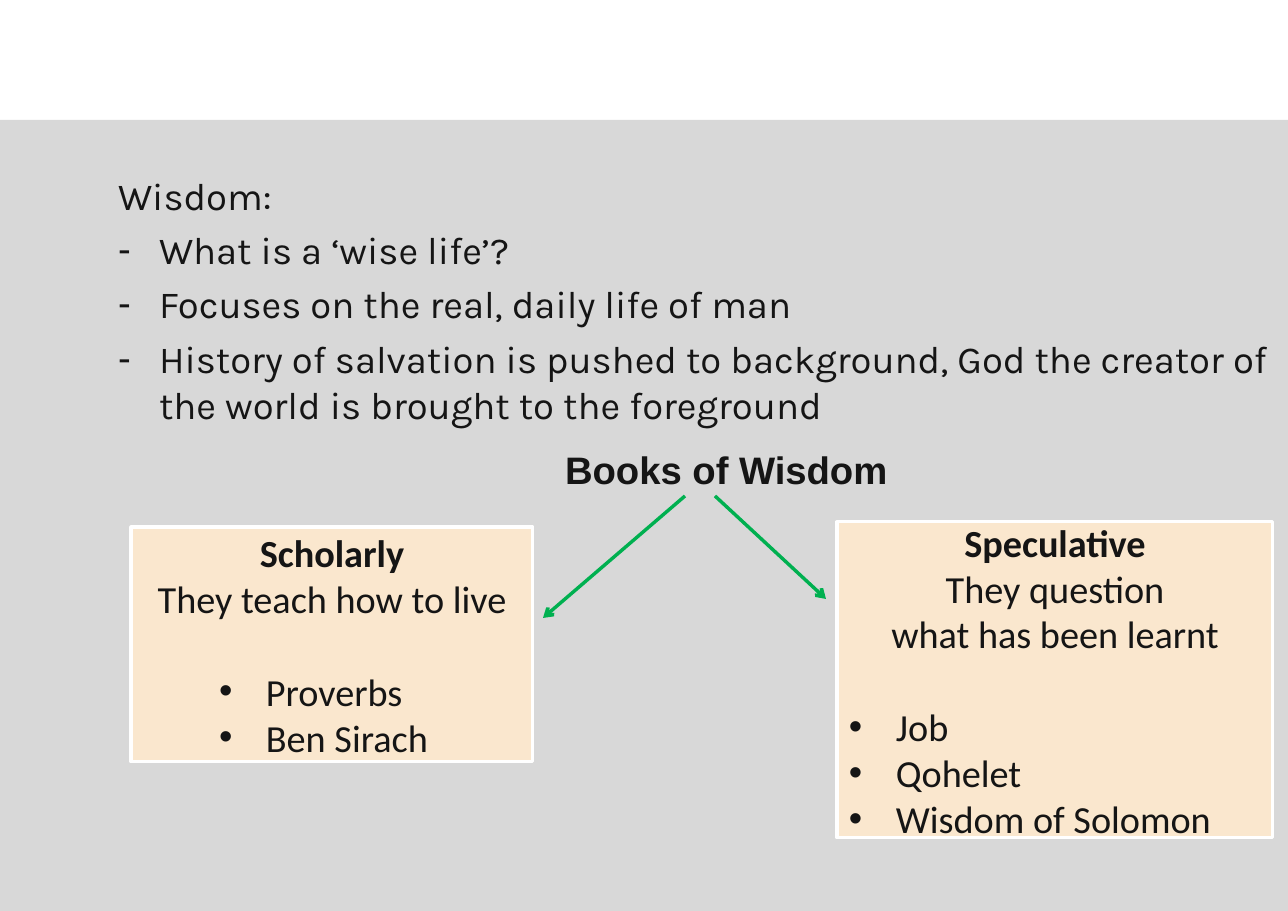
from dataclasses import dataclass
from pptx import Presentation
from pptx.dml.color import RGBColor as RGB
from pptx.enum.shapes import MSO_CONNECTOR as CONN, MSO_SHAPE as SHAPE
from pptx.enum.text import MSO_ANCHOR as ANCHOR, PP_ALIGN as ALIGN
from pptx.oxml.ns import qn
from pptx.util import Pt
from lxml.etree import SubElement

PX = 8298  # EMU in one px


@dataclass(frozen=True)
class Theme:
    panel: RGB = RGB(0xD8, 0xD8, 0xD8)
    card: RGB = RGB(0xFA, 0xE7, 0xCE)
    border: RGB = RGB(0xFF, 0xFF, 0xFF)
    ink: RGB = RGB(0x15, 0x15, 0x15)
    arrow: RGB = RGB(0x00, 0xB0, 0x50)
    size: float = 25
    body: str = "Karla"
    card_font: str = "Calibri"
    heading: str = "Arial"
    body_gap: float = 5.5
    card_gap: float = 30.5


T = Theme()


def px(*values):
    return [v * PX for v in values]


def set_all(obj, formats):
    for name, value in formats.items():
        setattr(obj, name, value)


def add_rect(s, box, fill, border=None):
    sp = s.shapes.add_shape(SHAPE.RECTANGLE, *px(*box))
    sp.shadow.inherit = False
    sp.fill.solid()
    sp.fill.fore_color.rgb = fill
    if border is None:
        sp.line.fill.background()
    else:
        sp.line.color.rgb = border
        sp.line.width = Pt(2)
    return sp


def set_frame(tf, x, y, anchor):
    left, top = px(x, y)
    set_all(tf, dict(word_wrap=True, vertical_anchor=anchor,
                     margin_left=left, margin_right=left,
                     margin_top=top, margin_bottom=top))


def add_bullet(p, char, left, hang):
    pPr = p._p.get_or_add_pPr()
    pPr.set("marL", str(left * PX))
    pPr.set("indent", str(-hang * PX))
    SubElement(pPr, qn("a:buFont")).set("typeface", T.heading)
    SubElement(pPr, qn("a:buChar")).set("char", char)


def add_paragraph(tf, text, font, bold=False, align=ALIGN.LEFT, gap=0, bullet=None):
    first = not tf.text
    p = tf.paragraphs[0] if first else tf.add_paragraph()
    if bullet:
        add_bullet(p, *bullet)
    p.text = text
    set_all(p, dict(alignment=align, space_before=Pt(0 if first else gap)))
    for r in p.runs:
        set_all(r.font, dict(name=font, size=Pt(T.size), bold=bold))
        r.font.color.rgb = T.ink


def add_text(s, box, inset):
    tf = s.shapes.add_textbox(*px(*box)).text_frame
    set_frame(tf, *inset, ANCHOR.TOP)
    return tf


def add_card(s, box, title, summary, books, indent):
    tf = add_rect(s, box, T.card, T.border).text_frame
    set_frame(tf, 12, 7, ANCHOR.MIDDLE)
    add_paragraph(tf, title, T.card_font, bold=True, align=ALIGN.CENTER)
    add_paragraph(tf, summary, T.card_font, align=ALIGN.CENTER)
    for i, book in enumerate(books):
        add_paragraph(tf, book, T.card_font, gap=0 if i else T.card_gap,
                      bullet=("•", indent, 47))


def add_arrow(s, start, end):
    c = s.shapes.add_connector(CONN.STRAIGHT, *px(*start, *end))
    c.line.color.rgb = T.arrow
    c.line.width = Pt(2.25)
    SubElement(c.line._get_or_add_ln(), qn("a:tailEnd")).set("type", "arrow")
    SubElement(c._element.spPr, qn("a:effectLst"))


def main():
    prs = Presentation()
    prs.slide_width, prs.slide_height = px(1288, 911)
    s = prs.slides.add_slide(prs.slide_layouts[6])

    # Grey panel
    add_rect(s, (0, 120, 1288, 791), T.panel)

    # Points on wisdom
    tf = add_text(s, (107, 172, 1182, 260), (11, 0))
    add_paragraph(tf, "Wisdom:", T.body)
    for point in (
        "What is a ‘wise life’?",
        "Focuses on the real, daily life of man",
        "History of salvation is pushed to background, God the creator of "
        "the world is brought to the foreground",
    ):
        add_paragraph(tf, point, T.body, gap=T.body_gap, bullet=("-", 41, 41))

    # Two kinds of books
    add_card(s, (131, 527, 402, 235), "Scholarly", "They teach how to live",
             ("Proverbs", "Ben Sirach"), 123)
    add_card(s, (837, 522, 436, 316), "Speculative",
             "They question\vwhat has been learnt",
             ("Job", "Qohelet", "Wisdom of Solomon"), 47)

    # Heading and its arrows
    add_arrow(s, (685, 496), (543, 618))
    add_arrow(s, (715, 496), (826, 599))
    tf = add_text(s, (553, 439, 363, 59), (12, 7))
    add_paragraph(tf, "Books of Wisdom", T.heading, bold=True)

    prs.save("out.pptx")


if __name__ == "__main__":
    main()
